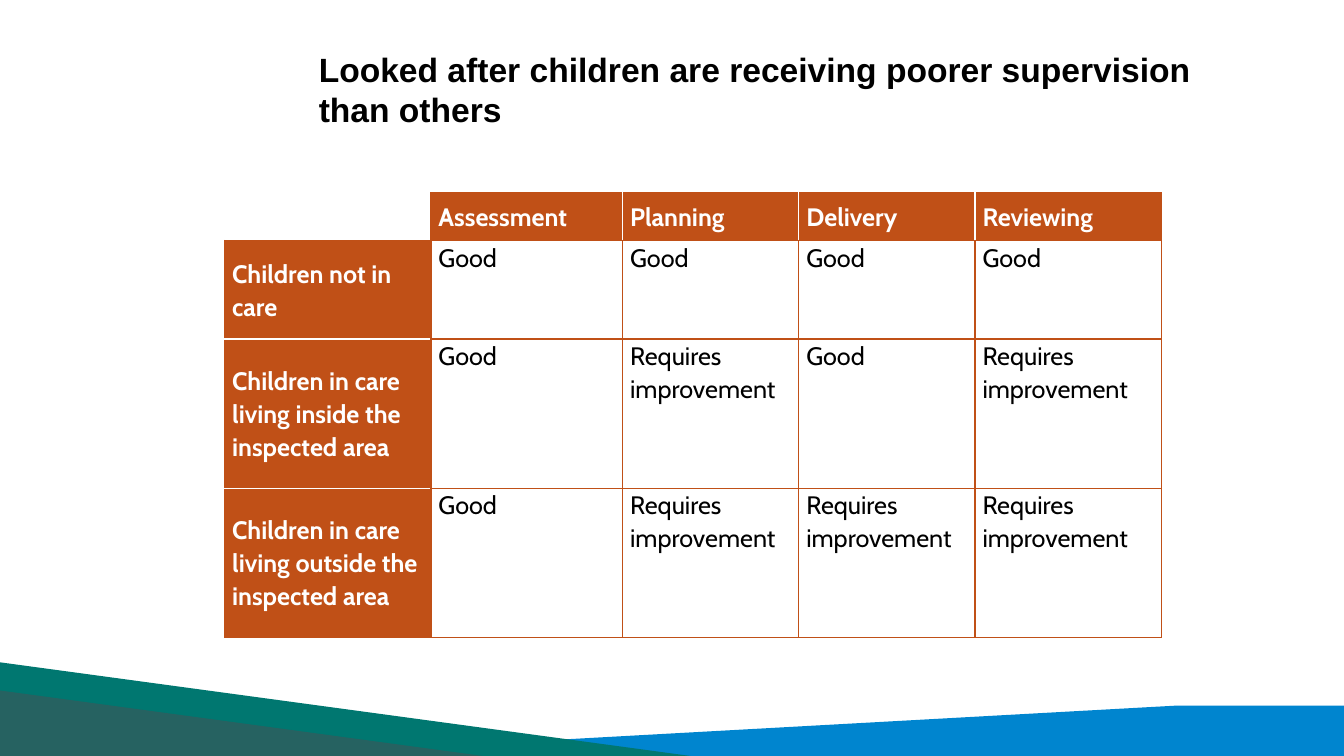
"""Build a slide comparing supervision ratings for children in and out of care."""
from lxml import etree
from pptx import Presentation
from pptx.dml.color import RGBColor
from pptx.enum import shapes, text
from pptx.oxml import ns
from pptx.util import Cm, Pt

TITLE = "Looked after children are receiving poorer supervision than others"
GOOD, POOR = "Good", "Requires improvement"
ROWS = [
    ["", "Assessment", "Planning", "Delivery", "Reviewing"],
    ["Children not in care", GOOD, GOOD, GOOD, GOOD],
    ["Children in care living inside the inspected area", GOOD, POOR, GOOD, POOR],
    ["Children in care living outside the inspected area", GOOD, POOR, POOR, POOR],
]
COL_WIDTHS = [5.2, 4.83, 4.44, 4.44, 4.71]
ROW_HEIGHTS = [1.2, 2.48, 3.76, 3.76]
TABLE_LEFT, TABLE_TOP = 5.66, 4.86
SLIDE_W, SLIDE_H = 33.87, 19.05
ORANGE, WHITE, BLACK = "C05017", "FFFFFF", "000000"
WAVE = [(6.65, 19.05), (29.67, 17.78), (33.87, 17.78), (33.87, 19.05)]
WAVE_COLOR = "0085CF"
TRIANGLES = [(17.4, 2.36, "007770", 100), (12.17, 1.65, "4D4E53", 50)]
EDGES = {"lnL": (0, -1), "lnR": (0, 1), "lnT": (-1, 0), "lnB": (1, 0)}


def rgb(value):
    return RGBColor.from_string(value)


def paint(sp, color, opacity=100):
    sp.shadow.inherit = False
    sp.line.fill.background()
    sp.fill.solid()
    sp.fill.fore_color.rgb = rgb(color)
    if opacity < 100:
        clr = sp._element.spPr.find(".//" + ns.qn("a:srgbClr"))
        etree.SubElement(clr, ns.qn("a:alpha"), val=str(opacity * 1000))


def write(p, words, size, font, color, bold):
    r = p.add_run()
    r.text = words
    r.font.size, r.font.name, r.font.bold = Pt(size), font, bold
    r.font.color.rgb = rgb(color)


def is_heading(row, col):
    return (row == 0) != (col == 0)


def edge_color(row, col, next_row, next_col):
    inside = 0 <= next_row < len(ROWS) and 0 <= next_col < len(COL_WIDTHS)
    if row == col == 0 and not inside:
        return None
    if inside and is_heading(row, col) and is_heading(next_row, next_col):
        return WHITE
    return ORANGE


def add_borders(cell, row, col):
    tc_pr = cell._tc.get_or_add_tcPr()
    for tag, (down, right) in EDGES.items():
        color = edge_color(row, col, row + down, col + right)
        ln = etree.SubElement(tc_pr, ns.qn("a:" + tag), w=str(Pt(1)))
        if color:
            fill = etree.SubElement(ln, ns.qn("a:solidFill"))
            etree.SubElement(fill, ns.qn("a:srgbClr"), val=color)
        else:
            etree.SubElement(ln, ns.qn("a:noFill"))


def fill_cell(cell, row, col):
    heading = is_heading(row, col)
    add_borders(cell, row, col)
    if heading:
        cell.fill.solid()
        cell.fill.fore_color.rgb = rgb(ORANGE)
        cell.vertical_anchor = text.MSO_ANCHOR.MIDDLE
    else:
        cell.fill.background()
    cell.margin_left = cell.margin_right = Cm(0.19)
    cell.margin_top = cell.margin_bottom = 0
    if ROWS[row][col]:
        p = cell.text_frame.paragraphs[0]
        p.line_spacing, p.space_after = 1.07, Pt(3)
        write(p, ROWS[row][col], 18, "Cabin", WHITE if heading else BLACK, heading)


def add_footer(s):
    points = [(Cm(x), Cm(y)) for x, y in WAVE]
    builder = s.shapes.build_freeform(*points[0])
    builder.add_line_segments(points[1:], close=True)
    paint(builder.convert_to_shape(), WAVE_COLOR)
    for width, height, color, opacity in TRIANGLES:
        sp = s.shapes.add_shape(shapes.MSO_SHAPE.RIGHT_TRIANGLE, 0,
                                Cm(SLIDE_H - height), Cm(width), Cm(height))
        paint(sp, color, opacity)


def add_title(s):
    sp = s.shapes.title
    sp.left, sp.top, sp.width, sp.height = Cm(7.78), Cm(1.48), Cm(23.02), Cm(1.53)
    tf = sp.text_frame
    tf.word_wrap = True
    tf.auto_size = text.MSO_AUTO_SIZE.NONE
    tf.vertical_anchor = text.MSO_ANCHOR.MIDDLE
    p = tf.paragraphs[0]
    p.alignment = text.PP_ALIGN.LEFT
    write(p, TITLE, 24, "Arial", BLACK, True)


def add_ratings(s):
    table = s.shapes.add_table(len(ROWS), len(COL_WIDTHS), Cm(TABLE_LEFT), Cm(TABLE_TOP),
                               Cm(sum(COL_WIDTHS)), Cm(sum(ROW_HEIGHTS))).table
    table.first_row = table.horz_banding = False
    for column, width in zip(table.columns, COL_WIDTHS):
        column.width = Cm(width)
    for row, height in enumerate(ROW_HEIGHTS):
        table.rows[row].height = Cm(height)
        for col in range(len(COL_WIDTHS)):
            fill_cell(table.cell(row, col), row, col)


def main():
    prs = Presentation()
    prs.slide_width, prs.slide_height = Cm(SLIDE_W), Cm(SLIDE_H)
    s = prs.slides.add_slide(prs.slide_layouts[5])
    add_footer(s)
    add_title(s)
    add_ratings(s)
    prs.save("out.pptx")


if __name__ == "__main__":
    main()
